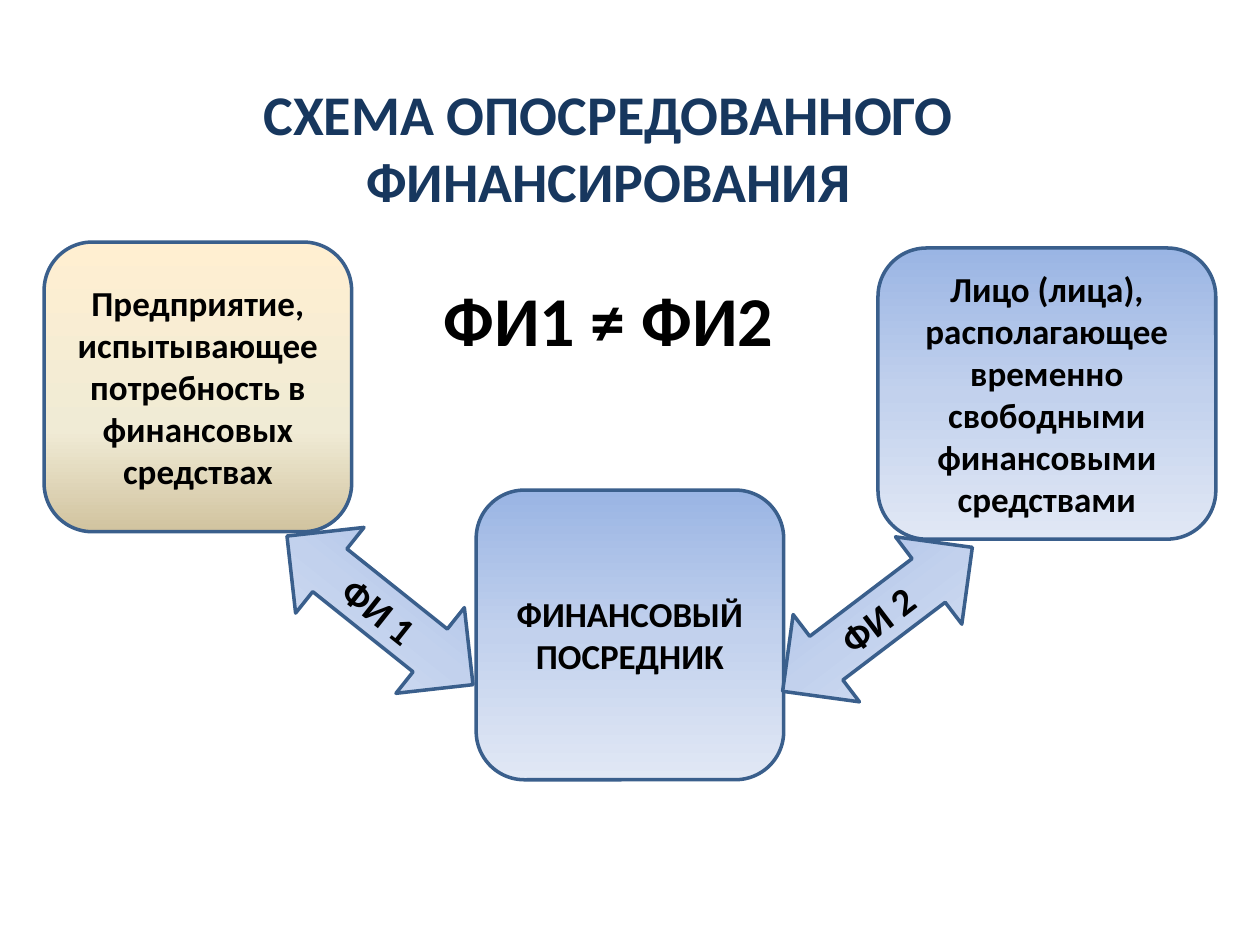
from dataclasses import dataclass

from lxml import etree
from pptx import Presentation
from pptx.dml import color
from pptx.enum import shapes, text
from pptx.oxml import ns
from pptx import util as u

HUES = {"ink": "000000", "title": "17375E", "edge": "3A5F8C"}
FADES = {
    "sand": {0: "FFEFD1", 65: "F0EBD5", 100: "D1C39F"},
    "blue": {0: "9AB5E4", 50: "C2D1ED", 100: "E1E8F5"},
}
KINDS = {
    "box": shapes.MSO_SHAPE.ROUNDED_RECTANGLE,
    "arrow": shapes.MSO_SHAPE.LEFT_RIGHT_ARROW,
}


@dataclass
class Node:
    kind: str
    left: float
    top: float
    width: float
    height: float
    label: str
    size: int = 20
    fade: str = "blue"
    turn: float = 0


BACK = [
    Node("box", 0.89, 4.88, 6.2, 5.84,
         "Предприятие, испытывающее потребность в финансовых средствах", fade="sand"),
    Node("box", 17.7, 5, 6.81, 5.87,
         "Лицо (лица), располагающее временно свободными финансовыми средствами"),
]
FRONT = [
    Node("arrow", 5.26, 11.2, 4.8, 2.21, "ФИ 1", 22, turn=38.6),
    Node("box", 9.6, 9.88, 6.2, 5.84, "ФИНАНСОВЫЙ ПОСРЕДНИК"),
    Node("arrow", 15.29, 11.38, 4.8, 2.21, "ФИ 2", 22, turn=322.8),
]


def shade(shape, stops: dict) -> None:
    shape.fill.gradient()
    shape.fill.gradient_angle = 270
    group = shape._element.spPr.find(".//" + ns.qn("a:gsLst"))
    for old in list(group):
        group.remove(old)
    for spot, hue in stops.items():
        stop = etree.SubElement(group, ns.qn("a:gs"), pos=str(spot * 1000))
        etree.SubElement(stop, ns.qn("a:srgbClr"), val=hue)


def write(para, label: str, size: int, hue: str = "ink", gap: int = 0) -> None:
    para.alignment = text.PP_ALIGN.CENTER
    para.space_before = u.Pt(gap)
    run = para.add_run()
    run.text = label
    style = {"name": "Calibri", "size": u.Pt(size), "bold": True}
    for key, value in style.items():
        setattr(run.font, key, value)
    run.font.color.rgb = color.RGBColor.from_string(HUES[hue])


def draw(slide, node: Node) -> None:
    area = map(u.Cm, (node.left, node.top, node.width, node.height))
    shape = slide.shapes.add_shape(KINDS[node.kind], *area)
    shape.shadow.inherit = False
    shape.rotation = node.turn
    shade(shape, FADES[node.fade])
    shape.line.color.rgb = color.RGBColor.from_string(HUES["edge"])
    shape.line.width = u.Pt(2)
    frame = shape.text_frame
    frame.word_wrap = True
    frame.vertical_anchor = text.MSO_ANCHOR.MIDDLE
    write(frame.paragraphs[0], node.label, node.size)


def head(slide) -> None:
    area = map(u.Cm, (1.57, 1.47, 21.39, 5.99))
    frame = slide.shapes.add_textbox(*area).text_frame
    frame.word_wrap = True
    frame.auto_size = text.MSO_AUTO_SIZE.SHAPE_TO_FIT_TEXT
    write(frame.paragraphs[0], "СХЕМА ОПОСРЕДОВАННОГО ФИНАНСИРОВАНИЯ", 32, "title", 12)
    write(frame.add_paragraph(), "ФИ1 ≠ ФИ2", 40, gap=36)


def main() -> None:
    deck = Presentation()
    deck.slide_width, deck.slide_height = u.Cm(25.4), u.Cm(19.05)
    slide = deck.slides.add_slide(deck.slide_layouts[6])
    for node in BACK:
        draw(slide, node)
    head(slide)
    for node in FRONT:
        draw(slide, node)
    deck.save("out.pptx")


if __name__ == "__main__":
    main()
